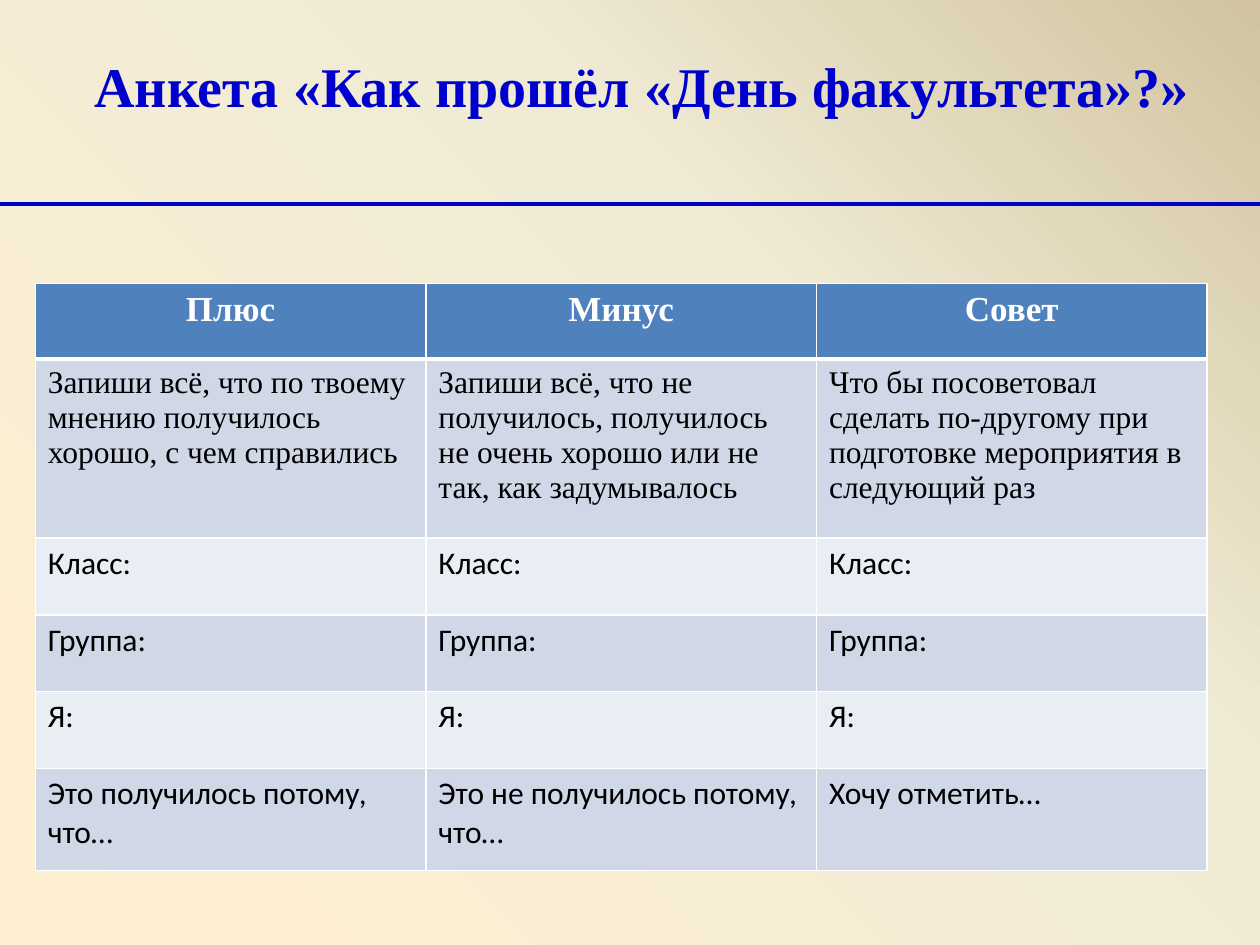
"""Build a slide with a feedback questionnaire table about the faculty day."""
import lxml.etree
import pptx
import pptx.dml.color
import pptx.enum.shapes
import pptx.enum.text
import pptx.oxml.ns
import pptx.util

Inches, Pt = pptx.util.Inches, pptx.util.Pt
qn = pptx.oxml.ns.qn
CENTER = pptx.enum.text.PP_ALIGN.CENTER
COLORS = {
    "accent": "0000CC", "header": "4F81BD", "odd": "D0D8E8", "even": "E9EDF4",
    "white": "FFFFFF", "black": "000000",
    "glow": "FFEFD1", "cream": "F0EBD5", "sand": "D1C39F",
}
SERIF, SANS = "Times New Roman", "Calibri"


def add_color(parent, name):
    """Append an RGB colour element to a stop or fill."""
    lxml.etree.SubElement(parent, qn("a:srgbClr"), val=COLORS[name])


def style_text(paragraph, size, face, color, bold=False):
    """Format every run of a paragraph."""
    for run in paragraph.runs:
        run.font.size = Pt(size)
        run.font.name = face
        run.font.bold = bold
        run.font.color.rgb = pptx.dml.color.RGBColor.from_string(COLORS[color])


prs = pptx.Presentation()
prs.slide_width, prs.slide_height = Inches(10), Inches(7.5)
slide = prs.slides.add_slide(prs.slide_layouts[6])

slide.background.fill.gradient()
gradient = next(slide.element.iter(qn("a:gradFill")))
for child in list(gradient):
    gradient.remove(child)
stops = lxml.etree.SubElement(gradient, qn("a:gsLst"))
for percent, name in ((0, "glow"), (65, "cream"), (100, "sand")):
    add_color(lxml.etree.SubElement(stops, qn("a:gs"), pos=str(percent * 1000)), name)
circle = lxml.etree.SubElement(gradient, qn("a:path"), path="circle")
lxml.etree.SubElement(circle, qn("a:fillToRect"), t="100000", r="100000")

title = slide.shapes.add_textbox(Inches(0.29), Inches(0.36), Inches(9.61), Inches(0.98))
title.text_frame.word_wrap = True
heading = title.text_frame.paragraphs[0]
heading.text = "Анкета «Как прошёл «День факультета»?»"
heading.alignment = CENTER
heading_props = heading._p.get_or_add_pPr()
heading_props.set("marL", str(Inches(0.38)))
heading_props.set("indent", str(Inches(-0.38)))
style_text(heading, 32, SERIF, "accent", True)

divider = slide.shapes.add_connector(
    pptx.enum.shapes.MSO_CONNECTOR.STRAIGHT, 0, Inches(1.62), Inches(10), Inches(1.62))
divider.line.color.rgb = pptx.dml.color.RGBColor.from_string(COLORS["accent"])
divider.line.width = Pt(2.25)
lxml.etree.SubElement(divider._element.spPr, qn("a:effectLst"))

answers = [
    ["Плюс", "Минус", "Совет"],
    ["Запиши всё, что по твоему мнению получилось хорошо, с чем справились",
     "Запиши всё, что не получилось, получилось не очень хорошо или не так, как задумывалось",
     "Что бы посоветовал сделать по-другому при подготовке мероприятия в следующий раз"],
    ["Класс:"] * 3,
    ["Группа:"] * 3,
    ["Я:"] * 3,
    ["Это получилось потому, что…", "Это не получилось потому, что…", "Хочу отметить…"],
]
row_heights = [0.6, 1.42, 0.61, 0.61, 0.61, 0.81]
questionnaire = slide.shapes.add_table(
    len(answers), 3, Inches(0.28), Inches(2.25), Inches(9.29), Inches(4.65)).table
for column in questionnaire.columns:
    column.width = Inches(3.1)

for row, (texts, height) in enumerate(zip(answers, row_heights)):
    questionnaire.rows[row].height = Inches(height)
    fill = "header" if row == 0 else "odd" if row % 2 else "even"
    for col, text in enumerate(texts):
        cell = questionnaire.cell(row, col)
        cell.text = text
        paragraph = cell.text_frame.paragraphs[0]
        if row == 0:
            paragraph.alignment = CENTER
            style_text(paragraph, 20, SERIF, "white", True)
        else:
            style_text(paragraph, 18, SERIF if row == 1 else SANS, "black")
        cell_props = cell._tc.get_or_add_tcPr()
        for side in "LRTB":
            thick = (row, side) in ((0, "B"), (1, "T"))
            border = lxml.etree.SubElement(
                cell_props, qn("a:ln" + side), w=str(Pt(3 if thick else 1)))
            add_color(lxml.etree.SubElement(border, qn("a:solidFill")), "white")
        cell.fill.solid()
        cell.fill.fore_color.rgb = pptx.dml.color.RGBColor.from_string(COLORS[fill])

prs.save("out.pptx")
